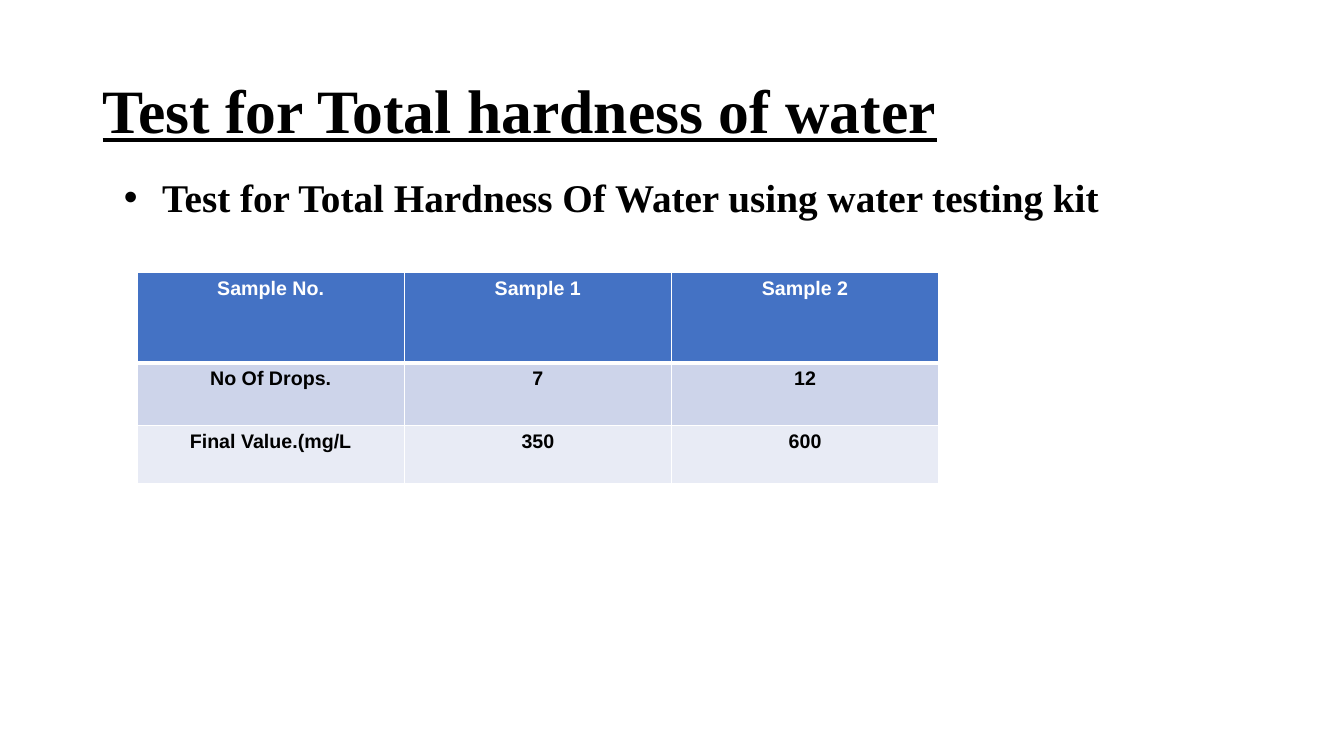
from lxml.etree import SubElement
from pptx import Presentation
from pptx.dml.color import RGBColor
from pptx.enum.text import MSO_ANCHOR, PP_ALIGN
from pptx.oxml.ns import qn
from pptx.util import Pt

PX = 9144
BLACK = RGBColor(0x00, 0x00, 0x00)
WHITE = RGBColor(0xFF, 0xFF, 0xFF)
HEADER_BLUE = RGBColor(0x44, 0x72, 0xC4)
BAND_DARK = RGBColor(0xCD, 0xD4, 0xEA)
BAND_LIGHT = RGBColor(0xE8, 0xEB, 0xF5)

RESULTS = [
    ("Sample No.", "Sample 1", "Sample 2"),
    ("No Of Drops.", "7", "12"),
    ("Final Value.(mg/L", "350", "600"),
]
ROW_HEIGHTS = [90, 62, 58]
ROW_FILLS = [HEADER_BLUE, BAND_DARK, BAND_LIGHT]
COLUMN_WIDTH = 265


def px(length):
    return length * PX


def style_font(font, name, size, color):
    font.name = name
    font.size = Pt(size)
    font.bold = True
    font.color.rgb = color


def add_text(slide, text, left, top, width, height, size, anchor):
    box = slide.shapes.add_textbox(px(left), px(top), px(width), px(height))
    frame = box.text_frame
    frame.word_wrap = True
    frame.vertical_anchor = anchor
    frame.text = text
    paragraph = frame.paragraphs[0]
    paragraph.line_spacing = 0.9
    style_font(paragraph.runs[0].font, "Times New Roman", size, BLACK)
    return paragraph


def add_bullet(paragraph, margin, hanging):
    properties = paragraph._p.get_or_add_pPr()
    properties.set("marL", str(px(margin)))
    properties.set("indent", str(-px(hanging)))
    SubElement(properties, qn("a:buFont"), typeface="Arial")
    SubElement(properties, qn("a:buChar"), char="•")


def add_border(cell, side, points):
    line = SubElement(cell._tc.get_or_add_tcPr(), qn(f"a:ln{side}"), w=str(Pt(points)))
    fill = SubElement(line, qn("a:solidFill"))
    SubElement(fill, qn("a:srgbClr"), val=str(WHITE))


def fill_cell(cell, text, row):
    for side in "LRTB":
        below_header = (row, side) in ((0, "B"), (1, "T"))
        add_border(cell, side, 3 if below_header else 1)
    cell.fill.solid()
    cell.fill.fore_color.rgb = ROW_FILLS[row]
    cell.text = text
    paragraph = cell.text_frame.paragraphs[0]
    paragraph.alignment = PP_ALIGN.CENTER
    style_font(paragraph.runs[0].font, "Arial", 14, WHITE if row == 0 else BLACK)


def add_results(slide, left, top):
    columns = len(RESULTS[0])
    table = slide.shapes.add_table(
        len(RESULTS), columns, px(left), px(top),
        px(COLUMN_WIDTH * columns), px(sum(ROW_HEIGHTS)),
    ).table
    for column in table.columns:
        column.width = px(COLUMN_WIDTH)
    for row, values in enumerate(RESULTS):
        table.rows[row].height = px(ROW_HEIGHTS[row])
        for column, value in enumerate(values):
            fill_cell(table.cell(row, column), value, row)


def main():
    presentation = Presentation()
    presentation.slide_width = px(1333)
    presentation.slide_height = px(750)
    slide = presentation.slides.add_slide(presentation.slide_layouts[6])

    title = add_text(slide, "Test for Total hardness of water",
                     92, 40, 1150, 145, 44, MSO_ANCHOR.MIDDLE)
    title.runs[0].font.underline = True
    method = add_text(slide, "Test for Total Hardness Of Water using water testing kit",
                      101, 172, 1150, 278, 28, MSO_ANCHOR.TOP)
    add_bullet(method, 50, 38)
    add_results(slide, 136, 270)

    presentation.save("out.pptx")


if __name__ == "__main__":
    main()
